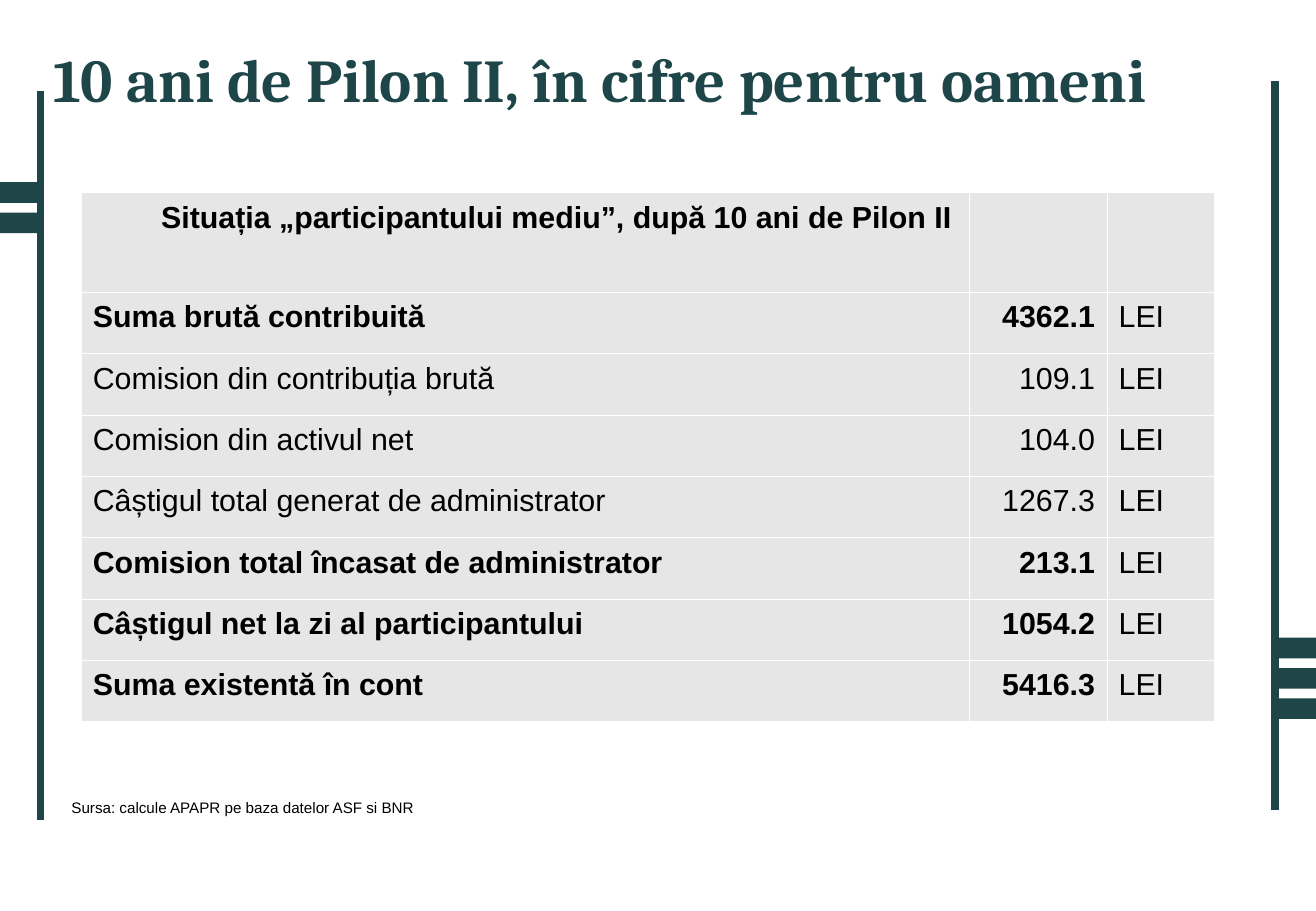
from lxml.etree import SubElement
from pptx import Presentation
from pptx.dml.color import RGBColor
from pptx.enum.shapes import MSO_CONNECTOR, MSO_SHAPE
from pptx.enum.text import MSO_ANCHOR, PP_ALIGN
from pptx.oxml.ns import qn
from pptx.util import Pt

PX = 4572
WIDTH, HEIGHT = 2168, 1500
TEAL = RGBColor(0x1E, 0x46, 0x49)
GREY = RGBColor(0xE6, 0xE6, 0xE6)
BLACK = RGBColor(0, 0, 0)
WHITE = RGBColor(0xFF, 0xFF, 0xFF)

HEADER = "Situația „participantului mediu”, după 10 ani de Pilon II"
ROWS = [
    ("Suma brută contribuită", "4362.1", True),
    ("Comision din contribuția brută", "109.1", False),
    ("Comision din activul net", "104.0", False),
    ("Câștigul total generat de administrator", "1267.3", False),
    ("Comision total încasat de administrator", "213.1", True),
    ("Câștigul net la zi al participantului", "1054.2", True),
    ("Suma existentă în cont", "5416.3", True),
]


def px(*lengths):
    return [length * PX for length in lengths]


def write(tf, text, size=18, font="Arial", color=BLACK, bold=False,
          align=PP_ALIGN.LEFT, spacing=0.87):
    tf.word_wrap = True
    p = tf.paragraphs[0]
    p.alignment = align
    p.line_spacing = spacing
    r = p.add_run()
    r.text = text
    r.font.size = Pt(size)
    r.font.name = font
    r.font.bold = bold
    r.font.color.rgb = color


def add_text(s, box, text, anchor=MSO_ANCHOR.TOP, **style):
    tf = s.shapes.add_textbox(*px(*box)).text_frame
    tf.vertical_anchor = anchor
    write(tf, text, **style)


def add_side_rule(s, x, y, height):
    line = s.shapes.add_connector(MSO_CONNECTOR.STRAIGHT, *px(x, y, x, y + height))
    line.line.color.rgb = TEAL
    line.line.width = Pt(4.5)
    SubElement(line._element.spPr, qn("a:effectLst"))


def add_bars(s, box, count, pitch=50):
    x, y, w, h = box
    for i in range(count):
        bar = s.shapes.add_shape(MSO_SHAPE.RECTANGLE, *px(x, y + i * pitch, w, h))
        bar.shadow.inherit = False
        bar.fill.solid()
        bar.fill.fore_color.rgb = TEAL
        bar.line.fill.background()


def style_cell(cell):
    cell.margin_left, cell.margin_top, cell.margin_right, cell.margin_bottom = px(19, 20, 20, 10)
    tcPr = cell._tc.get_or_add_tcPr()
    for side in ("a:lnL", "a:lnR", "a:lnT", "a:lnB"):
        ln = SubElement(tcPr, qn(side), w="1397")
        fill = SubElement(ln, qn("a:solidFill"))
        SubElement(fill, qn("a:srgbClr"), val=str(WHITE))
    cell.fill.solid()
    cell.fill.fore_color.rgb = GREY


def add_results_table(s, box, widths, header_height):
    x, y, w, h = box
    table = s.shapes.add_table(len(ROWS) + 1, len(widths), *px(x, y, w, h)).table
    table.first_row = False
    table.horz_banding = False
    for column, width in zip(table.columns, widths):
        column.width = width * PX
    row_height = (h - header_height) // len(ROWS)
    for i, row in enumerate(table.rows):
        row.height = (row_height if i else header_height) * PX
    for cell in table.iter_cells():
        style_cell(cell)
    header = table.cell(0, 0)
    header.margin_left = 124 * PX
    write(header.text_frame, HEADER, bold=True, align=PP_ALIGN.CENTER)
    for i, (label, amount, bold) in enumerate(ROWS, 1):
        write(table.cell(i, 0).text_frame, label, bold=bold)
        write(table.cell(i, 1).text_frame, amount, bold=bold, align=PP_ALIGN.RIGHT)
        write(table.cell(i, 2).text_frame, "LEI")


def main():
    prs = Presentation()
    prs.slide_width, prs.slide_height = px(WIDTH, HEIGHT)
    s = prs.slides.add_slide(prs.slide_layouts[6])
    add_bars(s, (2101, 1050, 67, 34), 3)
    add_side_rule(s, 2101, 134, 1200)
    add_side_rule(s, 67, 150, 1200)
    add_bars(s, (0, 300, 67, 34), 2)
    add_text(s, (68, 4, 2072, 250), "10 ani de Pilon II, în cifre pentru oameni",
             anchor=MSO_ANCHOR.MIDDLE, size=36, font="Cambria", color=TEAL,
             bold=True, spacing=1.0)
    add_results_table(s, (134, 317, 1866, 871), (1462, 228, 176), 164)
    add_text(s, (98, 1308, 1354, 46),
             "Sursa: calcule APAPR pe baza datelor ASF si BNR", size=9)
    prs.save("out.pptx")


if __name__ == "__main__":
    main()
